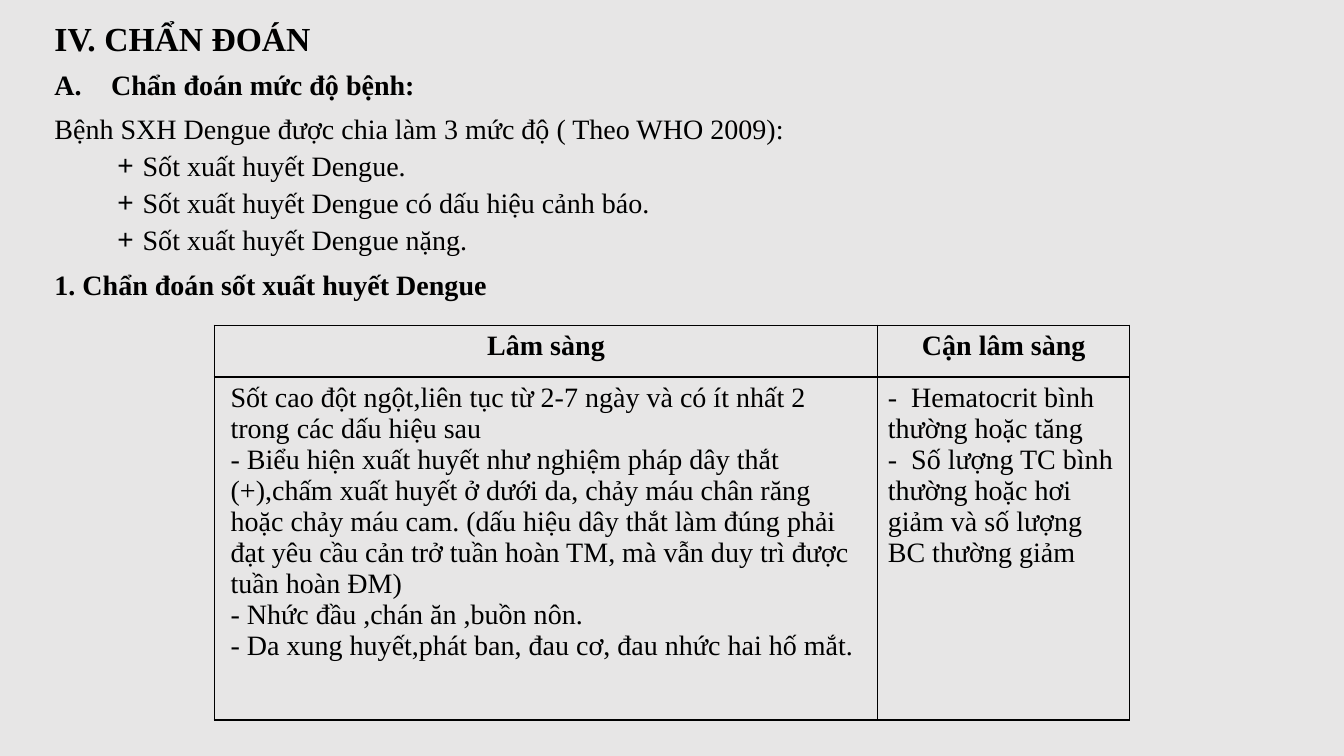
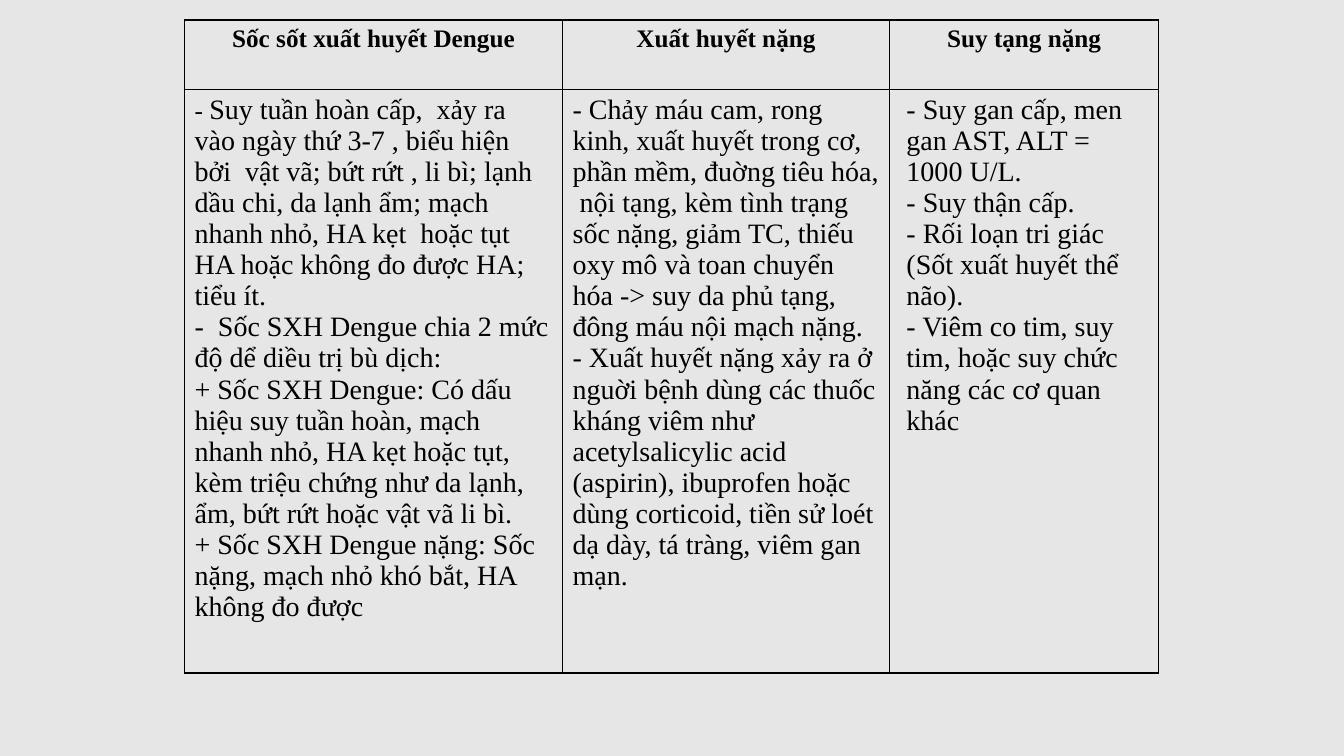
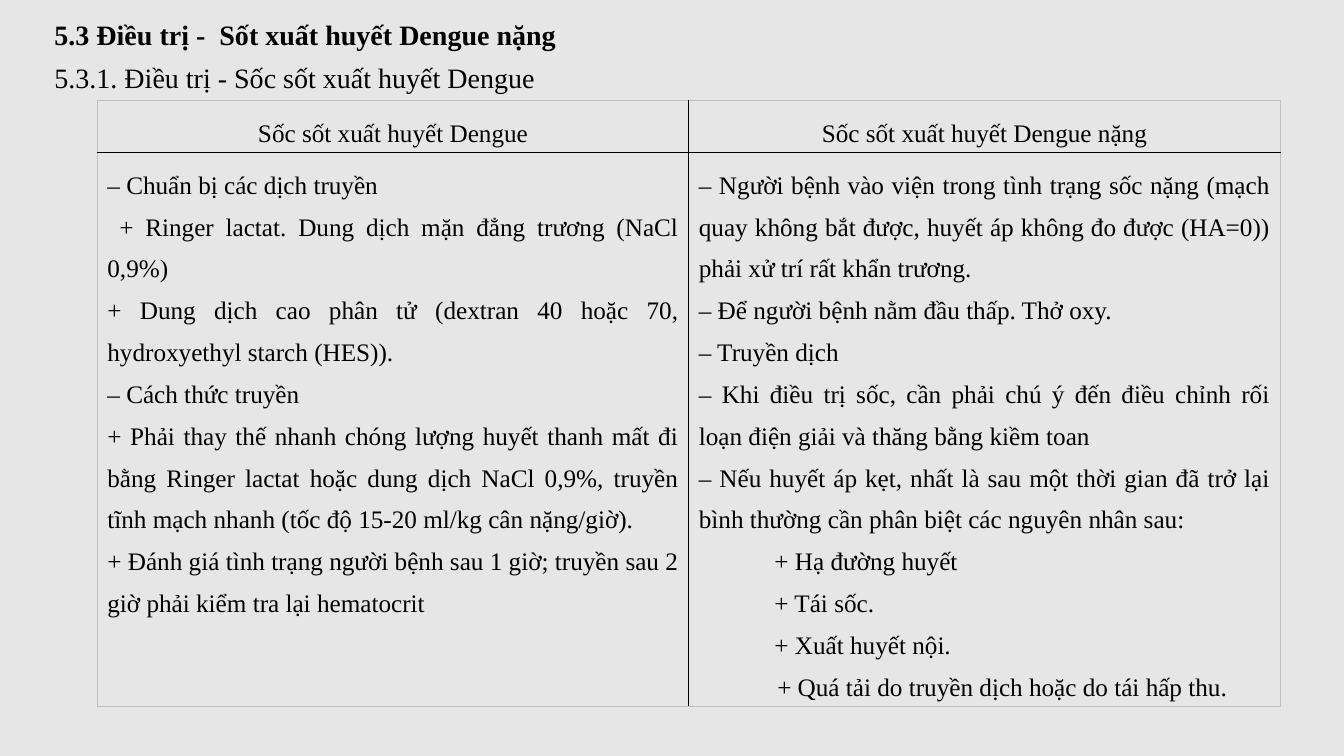
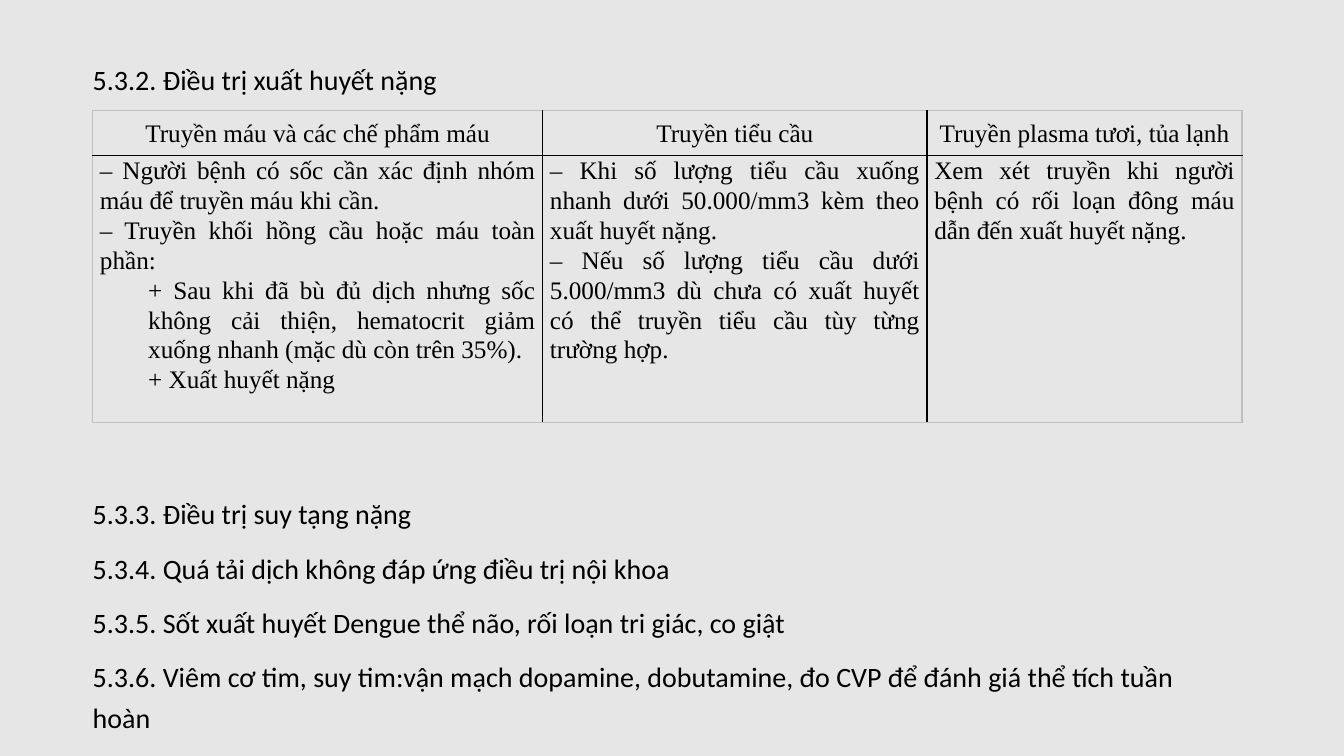
from copy import deepcopy

from lxml import etree
from pptx import Presentation
from pptx.dml.color import RGBColor
from pptx.enum.text import MSO_ANCHOR, MSO_AUTO_SIZE, PP_ALIGN
from pptx.oxml.ns import qn
from pptx.util import Pt

TOP, MIDDLE = MSO_ANCHOR.TOP, MSO_ANCHOR.MIDDLE
LEFT, CENTER, JUSTIFY = PP_ALIGN.LEFT, PP_ALIGN.CENTER, PP_ALIGN.JUSTIFY
NO_FIT = MSO_AUTO_SIZE.NONE
COLORS = {"bg": "E7E6E6", "text": "000000", "edge": "BFBFBF"}
SERIF, SANS = "Times New Roman", "Calibri"
NUMBER = ("a:buAutoNum", {"type": "alphaUcPeriod"})
PLUS = ("a:buChar", {"char": "+"})
NO_BULLET = ("a:buNone", {})


def write(p, text, size, font=SERIF, bold=False, align=LEFT, spacing=1.0,
          before=0, margin=0, indent=0, bullet=NO_BULLET):
    p.text = text
    p.alignment = align
    p.line_spacing = spacing
    p.space_before = Pt(before)
    p_pr = p._p.get_or_add_pPr()
    p_pr.set("marL", str(Pt(margin)))
    p_pr.set("indent", str(Pt(indent)))
    tag, attrs = bullet
    etree.SubElement(p_pr, qn(tag), attrs)
    for r in p.runs:
        r.font.name = font
        r.font.size = Pt(size)
        r.font.bold = bold
        r.font.color.rgb = RGBColor.from_string(COLORS["text"])


def add_grid(s, left, top, widths, heights, rows, head, body, edge="text",
             anchor=TOP, margins=(7.2, 3.6)):
    frame = s.shapes.add_table(len(heights), len(widths), Pt(left), Pt(top),
                               Pt(sum(widths)), Pt(sum(heights)))
    table = frame.table
    table.first_row = table.horz_banding = False
    for column, width in zip(table.columns, widths):
        column.width = Pt(width)
    for row, height in zip(table.rows, heights):
        row.height = Pt(height)
    for i, row in enumerate(rows):
        for j, lines in enumerate(row):
            cell = table.cell(i, j)
            cell.margin_left = cell.margin_right = Pt(margins[0])
            cell.margin_top = cell.margin_bottom = Pt(margins[1])
            cell.vertical_anchor = anchor if i == 0 else TOP
            outer = {"a:lnL": j == 0, "a:lnR": j == len(widths) - 1,
                     "a:lnT": i == 0, "a:lnB": i == len(heights) - 1}
            for tag, is_outer in outer.items():
                ln = etree.SubElement(cell._tc.get_or_add_tcPr(), qn(tag), w=str(Pt(1)))
                fill = etree.SubElement(ln, qn("a:solidFill"))
                etree.SubElement(fill, qn("a:srgbClr"), val=COLORS[edge if is_outer else "text"])
            cell.fill.background()
            tf = cell.text_frame
            for n, line in enumerate(lines):
                text, extra = line if isinstance(line, tuple) else (line, {})
                p = tf.paragraphs[0] if n == 0 else tf.add_paragraph()
                write(p, text, **{**(head if i == 0 else body), **extra})
    return table


prs = Presentation()
prs.slide_width, prs.slide_height = Pt(960), Pt(540)
fill = prs.slide_master.background.fill
fill.solid()
fill.fore_color.rgb = RGBColor.from_string(COLORS["bg"])
text_layout, blank_layout = prs.slide_layouts[1], prs.slide_layouts[6]

level_2 = dict(before=5, margin=63, indent=-18, bullet=PLUS)
pages = [
    dict(
        title=("IV. CHẨN ĐOÁN", dict(size=24, bold=True)),
        style=dict(size=20, spacing=0.9, before=10),
        boxes=[(31.7, 12.2, 883, 34), (31.7, 47, 883, 169)],
        lines=[
            ("Chẩn đoán mức độ bệnh:",
             dict(bold=True, before=0, margin=40.5, indent=-40.5, bullet=NUMBER)),
            ("Bệnh SXH Dengue được chia làm 3 mức độ ( Theo WHO 2009):", {}),
            ("Sốt xuất huyết Dengue.", level_2),
            ("Sốt xuất huyết Dengue có dấu hiệu cảnh báo.", level_2),
            ("Sốt xuất huyết Dengue nặng.", level_2),
            ("1. Chẩn đoán sốt xuất huyết Dengue", dict(bold=True)),
        ],
        table=dict(
            left=153, top=232.3, widths=[474, 180], heights=[37, 245],
            head=dict(size=20, bold=True, align=CENTER), body=dict(size=20),
            rows=[
                [["Lâm sàng"], ["Cận lâm sàng"]],
                [[(text, dict(margin=4.5)) for text in (
                    "Sốt cao đột ngột,liên tục từ 2-7 ngày và có ít nhất 2 trong các dấu hiệu sau",
                    "- Biểu hiện xuất huyết như nghiệm pháp dây thắt (+),chấm xuất huyết ở dưới da, "
                    "chảy máu chân răng hoặc chảy máu cam. (dấu hiệu dây thắt làm đúng phải đạt yêu "
                    "cầu cản trở tuần hoàn TM, mà vẫn duy trì được tuần hoàn ĐM)",
                    "- Nhức đầu ,chán ăn ,buồn nôn.",
                    "- Da xung huyết,phát ban, đau cơ, đau nhức hai hố mắt.")],
                 ["-  Hematocrit bình thường hoặc tăng",
                  "-  Số lượng TC bình thường hoặc hơi  giảm và số lượng BC thường giảm"]],
            ]),
    ),
    dict(
        table=dict(
            left=131.8, top=14.3, widths=[270, 233.5, 192.5], heights=[49.5, 417],
            head=dict(size=18, bold=True, align=CENTER), body=dict(size=20),
            rows=[
                [["Sốc sốt xuất huyết Dengue"], ["Xuất huyết nặng"], ["Suy tạng nặng"]],
                [["Suy tuần hoàn cấp,  xảy ra vào ngày thứ 3-7 , biểu hiện",
                  "bởi  vật vã; bứt rứt , li bì; lạnh dầu chi, da lạnh ẩm; mạch nhanh nhỏ, HA kẹt  "
                  "hoặc tụt HA hoặc không đo được HA; tiểu ít.",
                  "-  Sốc SXH Dengue chia 2 mức độ dể diều trị bù dịch:",
                  "+ Sốc SXH Dengue: Có dấu hiệu suy tuần hoàn, mạch nhanh nhỏ, HA kẹt hoặc tụt, "
                  "kèm triệu chứng như da lạnh, ẩm, bứt rứt hoặc vật vã li bì.",
                  "+ Sốc SXH Dengue nặng: Sốc nặng, mạch nhỏ khó bắt, HA không đo được"],
                 ["- Chảy máu cam, rong kinh, xuất huyết trong cơ, phần mềm, đuờng tiêu hóa,  nội "
                  "tạng, kèm tình trạng sốc nặng, giảm TC, thiếu oxy mô và toan chuyển hóa -> suy "
                  "da phủ tạng, đông máu nội mạch nặng.",
                  "- Xuất huyết nặng xảy ra ở nguời bệnh dùng các thuốc kháng viêm như "
                  "acetylsalicylic acid (aspirin), ibuprofen hoặc dùng corticoid, tiền sử loét dạ "
                  "dày, tá tràng, viêm gan mạn."],
                 [(text, dict(margin=5)) for text in (
                     "- Suy gan cấp, men gan AST, ALT = 1000 U/L.",
                     "- Suy thận cấp.",
                     "- Rối loạn tri giác (Sốt xuất huyết thể não).",
                     "- Viêm co tim, suy tim, hoặc suy chức năng các cơ quan khác")]],
            ]),
    ),
    dict(
        title=("5.3 Điều trị -  Sốt xuất huyết Dengue nặng", dict(bold=True)),
        style=dict(size=20, spacing=0.9),
        boxes=[(31.7, 11.5, 868, 30), (31.7, 42.2, 868, 29)],
        lines=[("5.3.1. Điều trị - Sốc sốt xuất huyết Dengue", {})],
        table=dict(
            left=69.5, top=71.7, widths=[422.5, 422.5], heights=[37.5, 395.5],
            head=dict(size=18, align=CENTER, spacing=1.5),
            body=dict(size=18, align=JUSTIFY, spacing=1.5), edge="edge", anchor=MIDDLE,
            rows=[
                [["Sốc sốt xuất huyết Dengue"], ["Sốc sốt xuất huyết Dengue nặng"]],
                [["‒ Chuẩn bị các dịch truyền",
                  ("+ Ringer lactat. Dung dịch mặn đẳng trương (NaCl 0,9%)", dict(indent=8.5)),
                  "+ Dung dịch cao phân tử (dextran 40 hoặc 70, hydroxyethyl starch (HES)).",
                  "‒ Cách thức truyền",
                  "+ Phải thay thế nhanh chóng lượng huyết thanh mất đi bằng Ringer lactat hoặc "
                  "dung dịch NaCl 0,9%, truyền tĩnh mạch nhanh (tốc độ 15-20 ml/kg cân nặng/giờ).",
                  "+ Đánh giá tình trạng người bệnh sau 1 giờ; truyền sau 2 giờ phải kiểm tra lại "
                  "hematocrit"],
                 ["‒ Người bệnh vào viện trong tình trạng sốc nặng (mạch quay không bắt được, huyết "
                  "áp không đo được (HA=0)) phải xử trí rất khẩn trương.",
                  "‒ Để người bệnh nằm đầu thấp. Thở oxy.",
                  "‒ Truyền dịch",
                  "‒ Khi điều trị sốc, cần phải chú ý đến điều chỉnh rối loạn điện giải và thăng "
                  "bằng kiềm toan",
                  "‒ Nếu huyết áp kẹt, nhất là sau một thời gian đã trở lại bình thường cần phân "
                  "biệt các nguyên nhân sau:",
                  ("+ Hạ đường huyết", dict(margin=54)),
                  ("+ Tái sốc.", dict(margin=54)),
                  ("+ Xuất huyết nội.", dict(margin=54)),
                  ("+ Quá tải do truyền dịch hoặc do tái hấp thu.", dict(margin=56))]],
            ]),
    ),
    dict(
        title=("5.3.2. Điều trị xuất huyết nặng", {}),
        style=dict(size=20, font=SANS, spacing=1.2, before=10),
        boxes=[(59, 36, 828, 38), (59, 346.5, 828, 193.5)],
        lines=[
            ("5.3.3. Điều trị suy tạng nặng", dict(before=0)),
            ("5.3.4. Quá tải dịch không đáp ứng điều trị nội khoa", {}),
            ("5.3.5. Sốt xuất huyết Dengue thể não, rối loạn tri giác, co giật", {}),
            ("5.3.6. Viêm cơ tim, suy tim:vận mạch dopamine, dobutamine, đo CVP để đánh giá thể "
             "tích tuần hoàn", {}),
        ],
        table=dict(
            left=66.2, top=79, widths=[321.5, 274.5, 225], heights=[32, 191],
            head=dict(size=18, align=CENTER, spacing=1.07),
            body=dict(size=18, align=JUSTIFY, spacing=1.07), edge="edge", anchor=MIDDLE,
            margins=(5.2, 0),
            rows=[
                [["Truyền máu và các chế phẩm máu"], ["Truyền tiểu cầu"],
                 ["Truyền plasma tươi, tủa lạnh"]],
                [["‒ Người bệnh có sốc cần xác định nhóm máu để truyền máu khi cần.",
                  "‒ Truyền khối hồng cầu hoặc máu toàn phần:",
                  ("+ Sau khi đã bù đủ dịch nhưng sốc không cải thiện, hematocrit giảm xuống nhanh "
                   "(mặc dù còn trên 35%).", dict(margin=34.5)),
                  ("+ Xuất huyết nặng", dict(margin=34.5))],
                 ["‒ Khi số lượng tiểu cầu xuống nhanh dưới 50.000/mm3 kèm theo xuất huyết nặng.",
                  "‒ Nếu số lượng tiểu cầu dưới 5.000/mm3 dù chưa có xuất huyết có thể truyền tiểu "
                  "cầu tùy từng trường hợp."],
                 ["Xem xét truyền khi người bệnh có rối loạn đông máu dẫn đến xuất huyết nặng."]],
            ]),
    ),
]

tables = []
for page in pages:
    s = prs.slides.add_slide(text_layout if "title" in page else blank_layout)
    if "title" in page:
        text, extra = page["title"]
        blocks = [[(text, {"before": 0, **extra})], page["lines"]]
        for sp, box, lines in zip(s.placeholders, page["boxes"], blocks):
            sp.left, sp.top, sp.width, sp.height = [Pt(v) for v in box]
            tf = sp.text_frame
            tf.auto_size = NO_FIT
            tf.word_wrap = True
            tf.vertical_anchor = TOP
            for n, (text, extra) in enumerate(lines):
                p = tf.paragraphs[0] if n == 0 else tf.add_paragraph()
                write(p, text, **{**page["style"], **extra})
    tables.append(add_grid(s, **page["table"]))

p = tables[1].cell(1, 0).text_frame.paragraphs[0]
first = p.runs[0]._r
first.addprevious(deepcopy(first))
p.runs[0].text = "- "
p.runs[0].font.size = Pt(18)

prs.save("out.pptx")
